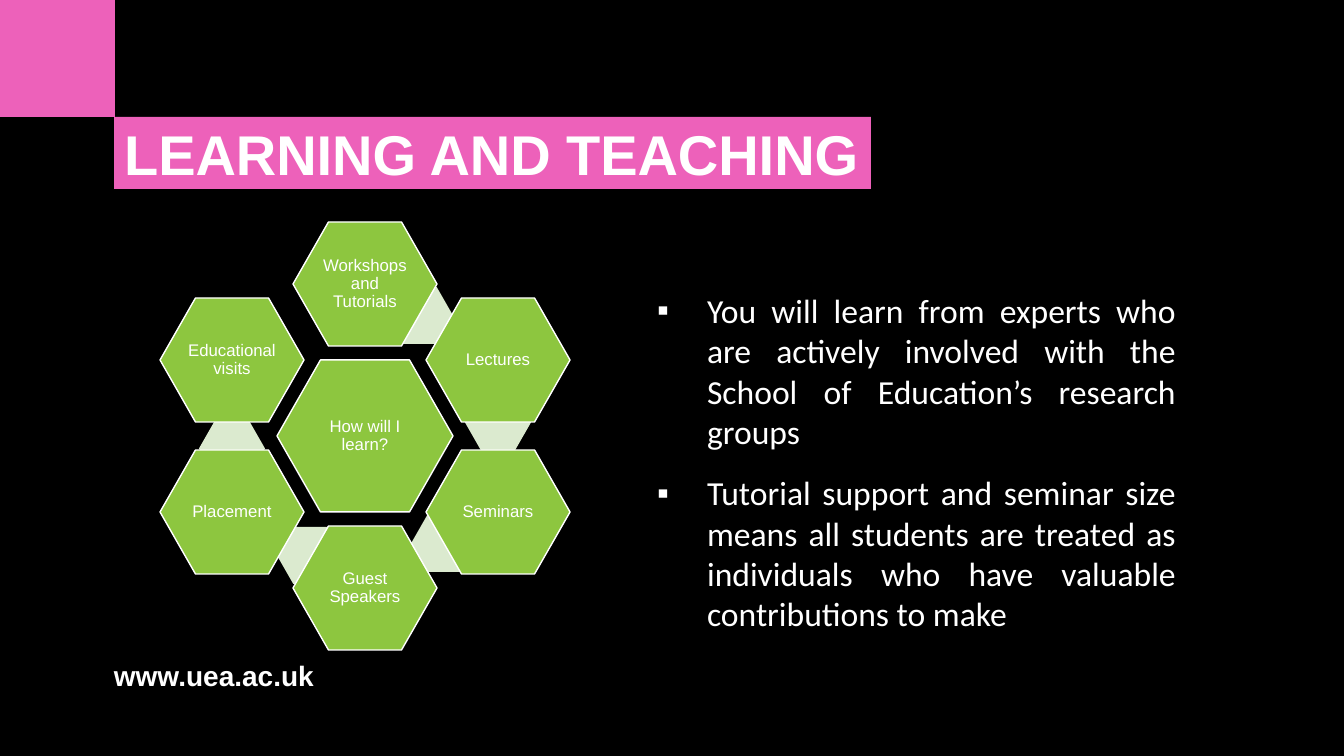
from dataclasses import dataclass

from lxml.etree import SubElement
from pptx import Presentation
from pptx.dml.color import RGBColor
from pptx.enum.shapes import MSO_SHAPE as Preset
from pptx.enum.text import MSO_ANCHOR as Anchor, MSO_AUTO_SIZE as AutoSize, PP_ALIGN as Align
from pptx.oxml.ns import qn
from pptx.util import Emu, Pt


@dataclass(frozen=True)
class Theme:
    black: str = "000000"
    white: str = "FFFFFF"
    pink: str = "ED61BA"
    green: str = "8DC63F"
    pale_green: str = "DBEACF"
    heading_font: str = "Arial"
    body_font: str = "Calibri"
    title_size: int = 40
    body_size: int = 24
    address_size: int = 20
    label_size: int = 12


theme = Theme()
EMU_PER_PX = 914400 / 100.8


def px(*lengths):
    """Turn pixel lengths into a list of EMU lengths."""
    return [Emu(round(length * EMU_PER_PX)) for length in lengths]


def add_run(paragraph, text, size, font=theme.heading_font, bold=False):
    run = paragraph.add_run()
    run.text = text
    run.font.name = font
    run.font.size = Pt(size)
    run.font.bold = bold
    run.font.color.rgb = RGBColor.from_string(theme.white)


presentation = Presentation()
presentation.slide_width, presentation.slide_height = px(1344, 756)
slide = presentation.slides.add_slide(presentation.slide_layouts[1])
slide.background.fill.solid()
slide.background.fill.fore_color.rgb = RGBColor.from_string(theme.black)

# Title band
title = slide.shapes.title
title.left, title.top, title.width, title.height = px(114, 117, 757, 72)
title.fill.solid()
title.fill.fore_color.rgb = RGBColor.from_string(theme.pink)
title.text_frame.auto_size = AutoSize.NONE
title.text_frame.vertical_anchor = Anchor.MIDDLE
paragraph = title.text_frame.paragraphs[0]
paragraph.alignment = Align.LEFT
add_run(paragraph, "LEARNING AND TEACHING", theme.title_size, bold=True)

# Bulleted list
points = [
    "You will learn from experts who are actively involved with the School of "
    "Education’s research groups",
    "Tutorial support and seminar size means all students are treated as individuals "
    "who have valuable contributions to make",
]
body = slide.placeholders[1]
body.left, body.top, body.width, body.height = px(647, 285, 539, 428)
body.text_frame.auto_size = AutoSize.NONE
body.text_frame.vertical_anchor = Anchor.TOP
bullet_indent = px(50)[0]
for index, point in enumerate(points):
    paragraph = body.text_frame.add_paragraph() if index else body.text_frame.paragraphs[0]
    properties = paragraph._p.get_or_add_pPr()
    properties.set("marL", str(bullet_indent))
    properties.set("indent", str(-bullet_indent))
    bullet_color = SubElement(properties, qn("a:buClr"))
    SubElement(bullet_color, qn("a:srgbClr"), val=theme.white)
    SubElement(properties, qn("a:buChar"), char="▪")
    paragraph.alignment = Align.JUSTIFY
    paragraph.space_before = Pt(12 if index else 0)
    paragraph.space_after = Pt(3)
    add_run(paragraph, point, theme.body_size, theme.body_font)

# Corner square
corner = slide.shapes.add_shape(Preset.RECTANGLE, *px(0, 0, 115, 117))
corner.shadow.inherit = False
corner.fill.solid()
corner.fill.fore_color.rgb = RGBColor.from_string(theme.pink)
corner.line.fill.background()

# Web address
address = slide.shapes.add_textbox(*px(104, 650, 229, 54))
address.text_frame.word_wrap = True
address.text_frame.vertical_anchor = Anchor.MIDDLE
paragraph = address.text_frame.paragraphs[0]
paragraph.line_spacing = 0.9
add_run(paragraph, "www.uea.ac.uk", theme.address_size, bold=True)

# Hexagon cluster: pale links lie behind a hub and its ring
hub_x, hub_y = 365, 436
step_x, step_y = 133, 76
hub_size, ring_size, link_size = (176, 152), (144, 124), (66, 57)
links = [(387, 287), (465, 394), (411, 515), (277, 527), (199, 420)]
ring = [
    ("Workshops and Tutorials", 0, -2),
    ("Lectures", 1, -1),
    ("Seminars", 1, 1),
    ("Guest Speakers", 0, 2),
    ("Placement", -1, 1),
    ("Educational visits", -1, -1),
]
hexagons = [("", left, top, link_size) for left, top in links]
for label, column, row, size in [("How will I learn?", 0, 0, hub_size)] + [
    (*place, ring_size) for place in ring
]:
    left = hub_x + column * step_x - size[0] // 2
    top = hub_y + row * step_y - size[1] // 2
    hexagons.append((label, left, top, size))

for label, left, top, size in hexagons:
    hexagon = slide.shapes.add_shape(Preset.HEXAGON, *px(left, top, *size))
    hexagon.shadow.inherit = False
    hexagon.adjustments[0] = 0.286
    hexagon.fill.solid()
    if not label:
        hexagon.fill.fore_color.rgb = RGBColor.from_string(theme.pale_green)
        hexagon.line.fill.background()
        continue
    hexagon.fill.fore_color.rgb = RGBColor.from_string(theme.green)
    hexagon.line.color.rgb = RGBColor.from_string(theme.white)
    hexagon.line.width = Pt(1)
    frame = hexagon.text_frame
    frame.word_wrap = True
    frame.vertical_anchor = Anchor.MIDDLE
    frame.margin_left, frame.margin_top, frame.margin_right, frame.margin_bottom = px(2, 2, 2, 2)
    paragraph = frame.paragraphs[0]
    paragraph.alignment = Align.CENTER
    paragraph.line_spacing = 0.9
    paragraph.space_after = Pt(4)
    add_run(paragraph, label, theme.label_size)

presentation.save("out.pptx")
